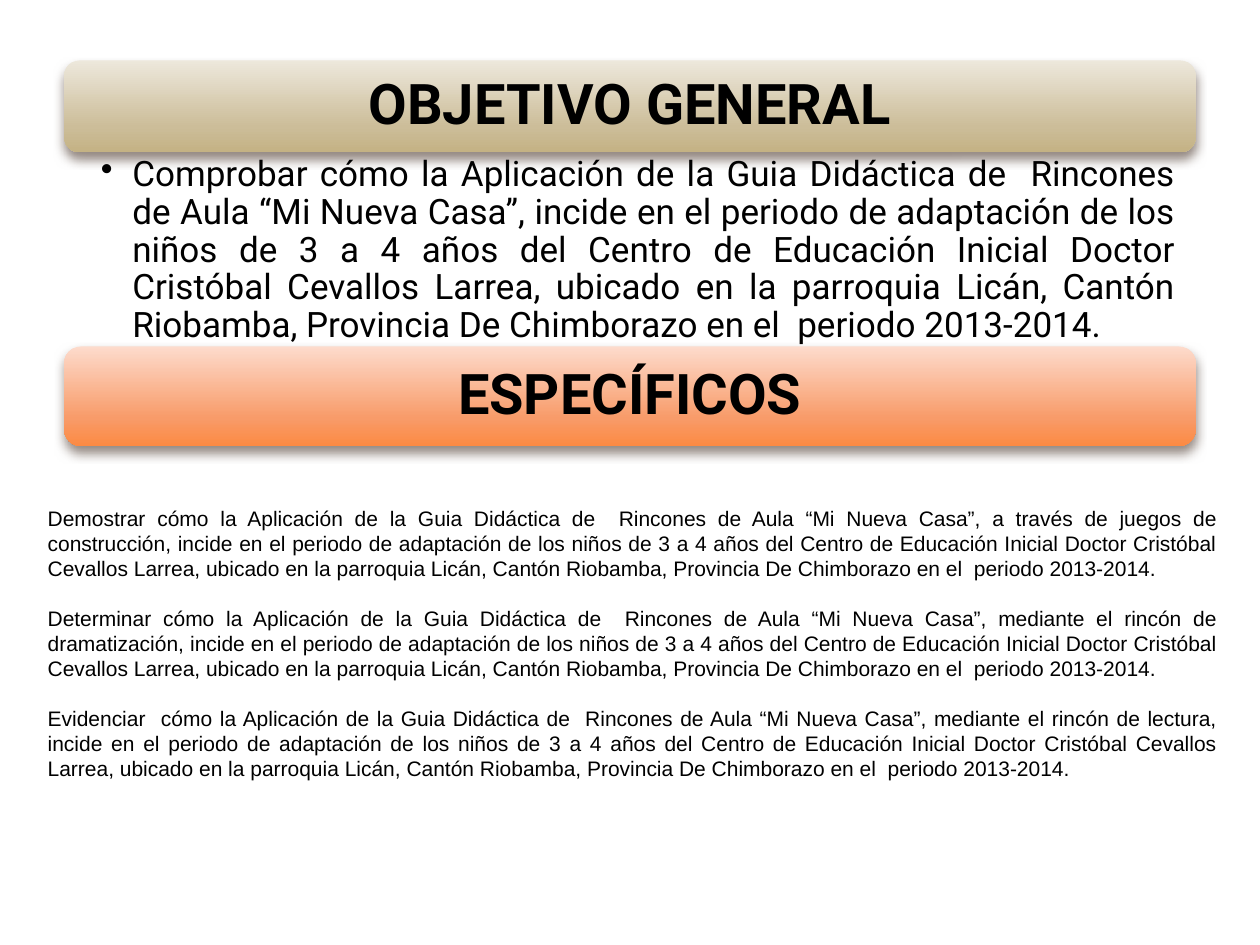
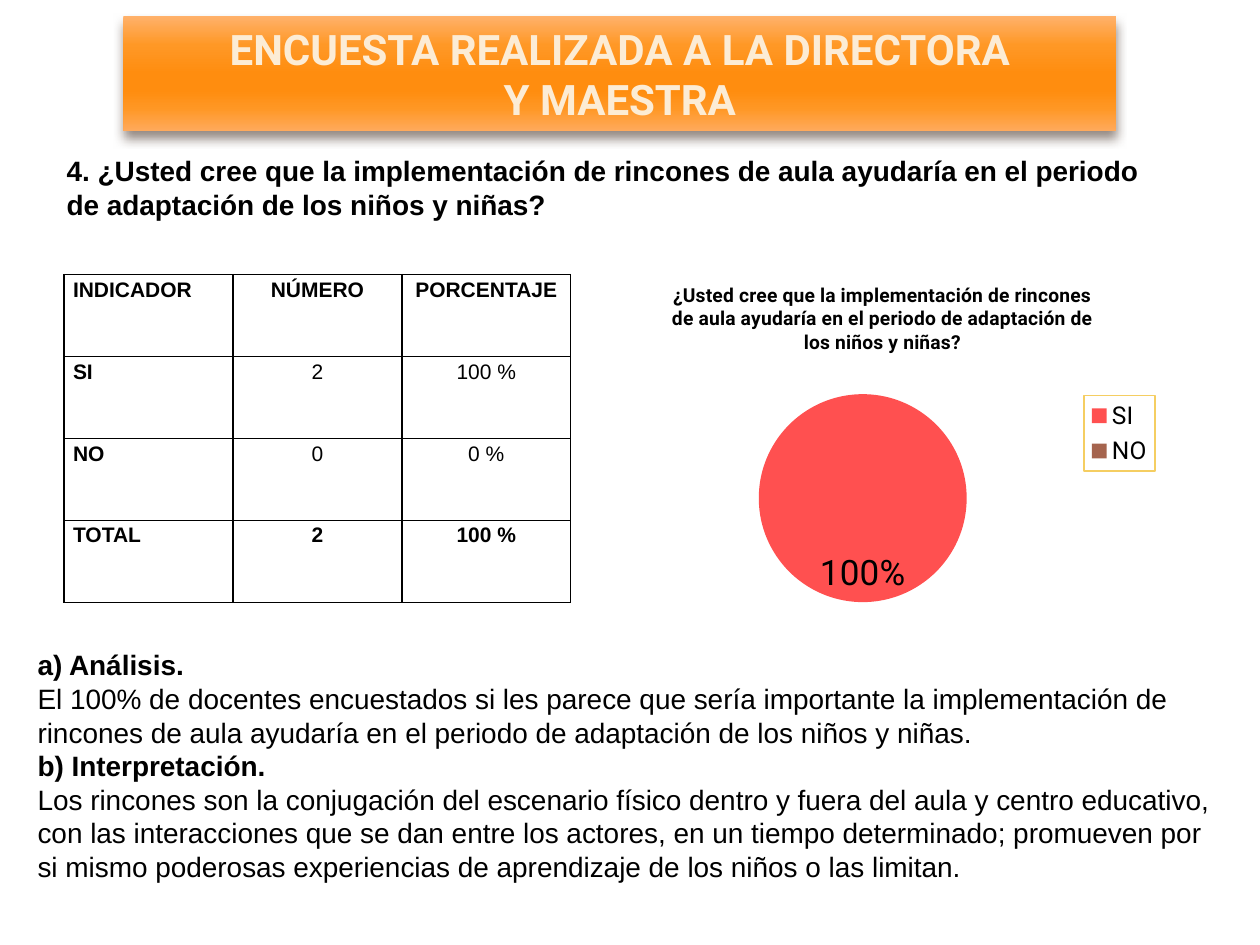
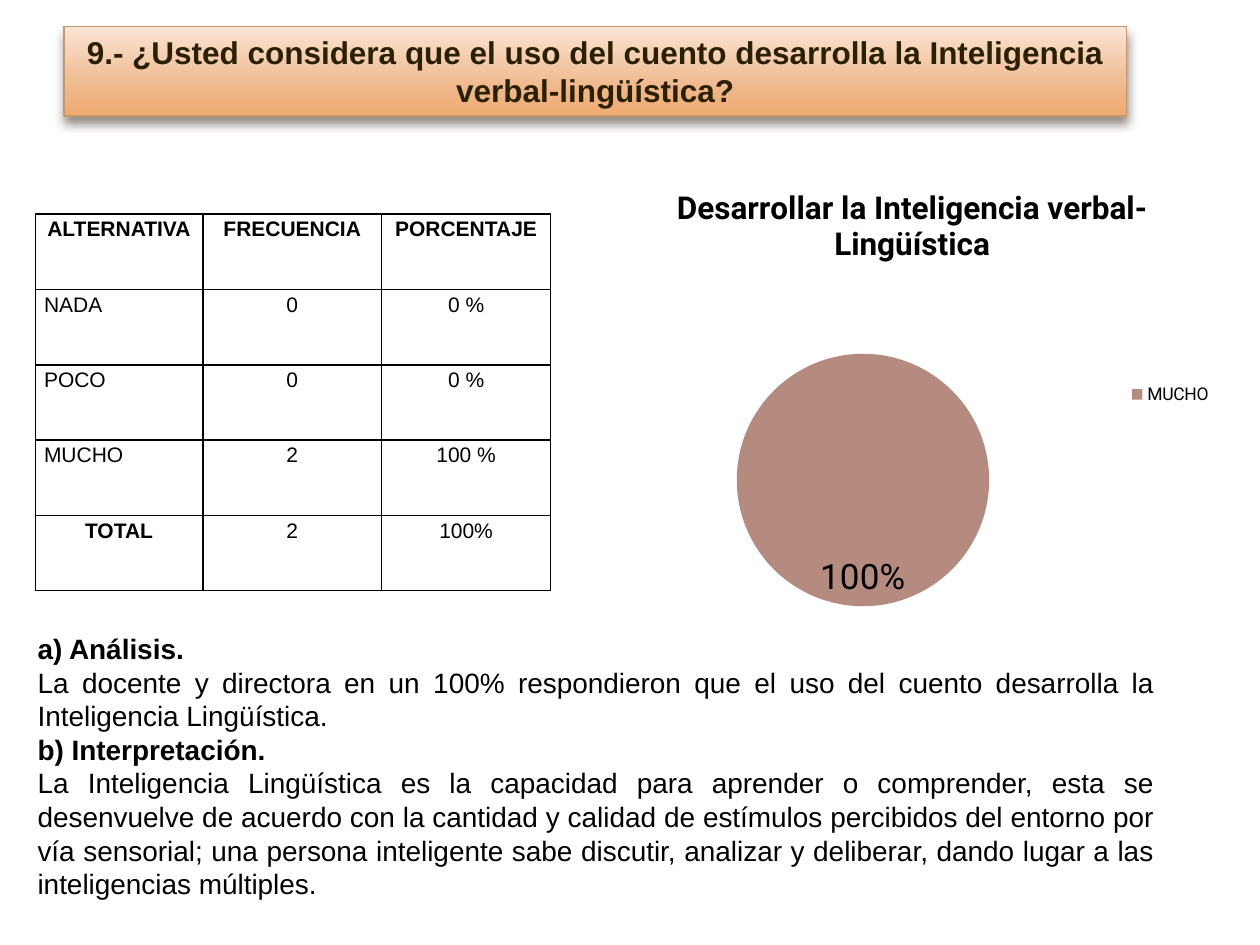
from lxml.etree import SubElement
from pptx import Presentation
from pptx.chart.data import CategoryChartData
from pptx.dml.color import RGBColor
from pptx.enum.chart import XL_CHART_TYPE, XL_LABEL_POSITION as LabelPos, XL_LEGEND_POSITION as LegendPos
from pptx.enum.shapes import MSO_SHAPE as Shape
from pptx.enum.text import MSO_ANCHOR as Anchor, PP_ALIGN as Align
from pptx.oxml import parse_xml
from pptx.oxml.ns import nsdecls, qn
from pptx.util import Inches, Pt

SLIDE_W, SLIDE_H = Inches(10), Inches(7.5)
GRID_COLS, GRID_ROWS = 100, 75
BLACK = "000000"
SHADOW = "4E3B30"
HEADING, BODY = "Roboto", "Arial"

SAND = [(0, "EDE8DC"), (72, "CCBD99"), (100, "C4B284")]
CORAL = [(0, "FDDBCC"), (72, "F89B69"), (100, "FC8A43")]
ORANGE = [(0, "FFB16A"), (25, "FF9826"), (50, "FF8D0F"), (65, "FF8D0F"), (80, "FF9724"), (100, "FFAA5C")]
PEACH = [(0, "FAE4D5"), (72, "EFB688"), (100, "EFAA6F")]

GUIDE = "cómo la Aplicación de la Guia Didáctica de  Rincones de Aula “Mi Nueva Casa”,"
CENTRE = (
    "incide en el periodo de adaptación de los niños de 3 a 4 años del Centro de Educación Inicial "
    "Doctor Cristóbal Cevallos Larrea, ubicado en la parroquia Licán, Cantón Riobamba, "
    "Provincia De Chimborazo en el  periodo 2013-2014."
)
SURVEY_QUESTION = (
    "¿Usted cree que la implementación de rincones de aula ayudaría en el periodo "
    "de adaptación de los niños y niñas?"
)


def rgb(value):
    """Turn a hex string into a colour."""
    return RGBColor.from_string(value)


def grid(col, row, cols, rows):
    """Turn grid columns and rows into left, top, width and height."""
    unit_w, unit_h = SLIDE_W / GRID_COLS, SLIDE_H / GRID_ROWS
    return [round(n) for n in (col * unit_w, row * unit_h, cols * unit_w, rows * unit_h)]


def set_font(font, size, name=BODY, color=BLACK, bold=False):
    """Give a font its size, face, colour and weight."""
    font.size, font.name, font.bold = Pt(size), name, bold
    font.color.rgb = rgb(color)


def write(frame, lines, size, align=Align.LEFT, name=BODY, color=BLACK, bold=(False,), gap=0, spacing=None):
    """Fill a frame with paragraphs, cycling through the given weights."""
    frame.word_wrap = True
    for number, line in enumerate(lines):
        paragraph = frame.paragraphs[0] if number == 0 else frame.add_paragraph()
        paragraph.text, paragraph.alignment = line, align
        if number and gap:
            paragraph.space_before = Pt(gap)
        if spacing:
            paragraph.line_spacing = spacing
        set_font(paragraph.font, size, name, color, bold[number % len(bold)])


def text_block(slide, box, lines, size, anchor=Anchor.MIDDLE, **style):
    """Add a text box and return its frame."""
    frame = slide.shapes.add_textbox(*grid(*box)).text_frame
    frame.vertical_anchor = anchor
    write(frame, lines, size, **style)
    return frame


def banner(slide, box, lines, size, stops, outline=Shape.RECTANGLE, border=None, **style):
    """Add a gradient title band with a soft shadow below it."""
    band = slide.shapes.add_shape(outline, *grid(*box))
    band.fill.gradient()
    band.fill.gradient_angle = 270
    properties = band.element.spPr
    stop_list = properties.find(f"{qn('a:gradFill')}/{qn('a:gsLst')}")
    stop_list.clear()
    for share, color in stops:
        stop = SubElement(stop_list, qn("a:gs"), pos=str(share * 1000))
        SubElement(stop, qn("a:srgbClr"), val=color)
    if border:
        band.line.color.rgb, band.line.width = rgb(border), Pt(0.79)
    else:
        band.line.fill.background()
    band.shadow.inherit = False
    cast = SubElement(
        properties.find(qn("a:effectLst")), qn("a:outerShdw"),
        blurRad=str(Pt(6)), dist=str(Pt(4)), dir="5400000", rotWithShape="0",
    )
    SubElement(SubElement(cast, qn("a:srgbClr"), val=SHADOW), qn("a:alpha"), val="60000")
    band.text_frame.vertical_anchor = Anchor.MIDDLE
    write(band.text_frame, lines, size, align=Align.CENTER, bold=(True,), **style)


def bullet_block(slide, box, line):
    """Add one justified paragraph with a hanging bullet."""
    frame = text_block(slide, box, [], 20, Anchor.TOP)
    frame.margin_left, frame.margin_right = Inches(0.29), Inches(0.16)
    frame.margin_top = frame.margin_bottom = Inches(0.03)
    properties = frame.paragraphs[0]._p.get_or_add_pPr()
    properties.set("marL", str(Inches(0.25)))
    properties.set("indent", str(Inches(-0.25)))
    SubElement(properties, qn("a:buChar"), char="•")
    write(frame, [line], 20, Align.JUSTIFY, HEADING, spacing=0.9)


def border_cell(cell):
    """Draw thin black lines on all four sides of a cell."""
    properties = cell._tc.get_or_add_tcPr()
    for index, side in enumerate(("lnL", "lnR", "lnT", "lnB")):
        properties.insert(index, parse_xml(
            f'<a:{side} {nsdecls("a")} w="{Pt(1)}"><a:solidFill><a:srgbClr val="{BLACK}"/></a:solidFill></a:{side}>'
        ))


def results_table(slide, box, records, shares, first_column, bold_cells):
    """Add a ruled table; first_column lists the alignment of each row's label."""
    left, top, width, height = grid(*box)
    table = slide.shapes.add_table(len(records), len(shares), left, top, width, height).table
    for column, share in zip(table.columns, shares):
        column.width = round(width * share / sum(shares))
    for r, record in enumerate(records):
        table.rows[r].height = round(height / len(records))
        for c, value in enumerate(record):
            cell = table.cell(r, c)
            cell.fill.background()
            cell.margin_left = cell.margin_right = Inches(0.07)
            cell.margin_top = cell.margin_bottom = 0
            align = Align.CENTER if c else first_column[r]
            write(cell.text_frame, [value], 12, align, bold=((r, c) in bold_cells,), spacing=1.15)
            border_cell(cell)


def results_pie(slide, box, title, title_size, answers, legend_size, hidden=(), plot=None, legend_border=None):
    """Add a pie of answers given as (label, share, colour)."""
    data = CategoryChartData(number_format="0%")
    data.categories = [label for label, _, _ in answers]
    data.add_series("Series 1", [share for _, share, _ in answers])
    chart = slide.shapes.add_chart(XL_CHART_TYPE.PIE, *grid(*box), data).chart
    set_font(chart.font, 10, HEADING)

    chart.has_title = True
    chart.chart_title.include_in_layout = False
    write(chart.chart_title.text_frame, [title], title_size, Align.CENTER, HEADING, bold=(True,))

    pie = chart.plots[0]
    pie.vary_by_categories = True
    for index, (_, _, color) in enumerate(answers):
        fill = pie.series[0].points[index].format.fill
        fill.solid()
        fill.fore_color.rgb = rgb(color)
    first_point = pie.series[0]._element.find(qn("c:dPt"))
    first_point.addprevious(parse_xml(f'<c:explosion {nsdecls("c")} val="25"/>'))

    pie.has_data_labels = True
    labels = pie.data_labels
    labels.show_value, labels.show_percentage = True, False
    labels.number_format, labels.number_format_is_linked = "0%;;;", False
    labels.position = LabelPos.INSIDE_END
    set_font(labels.font, 20, HEADING)

    chart.has_legend = True
    chart.legend.position = LegendPos.RIGHT
    chart.legend.include_in_layout = False
    set_font(chart.legend.font, legend_size, HEADING)
    legend = chart.legend._element
    for index in reversed(hidden):
        legend.find(qn("c:legendPos")).addnext(parse_xml(
            f'<c:legendEntry {nsdecls("c")}><c:idx val="{index}"/><c:delete val="1"/></c:legendEntry>'
        ))
    if legend_border:
        legend.find(qn("c:overlay")).addnext(parse_xml(
            f'<c:spPr {nsdecls("c", "a")}><a:ln w="{Pt(0.75)}"><a:solidFill>'
            f'<a:srgbClr val="{legend_border}"/></a:solidFill></a:ln></c:spPr>'
        ))
    if plot:
        place_plot(chart, plot)


def place_plot(chart, shares):
    """Fix the inner plot area at shares of the chart's size."""
    area = chart._chartSpace.chart.plotArea
    for automatic in area.findall(qn("c:layout")):
        area.remove(automatic)
    layout = parse_xml(f'<c:layout {nsdecls("c")}><c:manualLayout/></c:layout>')
    settings = [("layoutTarget", "inner"), ("xMode", "edge"), ("yMode", "edge"), *zip("xywh", shares)]
    for tag, value in settings:
        SubElement(layout[0], qn(f"c:{tag}"), val=str(value))
    area.insert(0, layout)


def objectives_slide(slide):
    """Build the general and specific objectives."""
    heading = {"outline": Shape.ROUNDED_RECTANGLE, "name": HEADING, "spacing": 0.9}
    banner(slide, (5.1, 4.8, 89.8, 7.3), ["OBJETIVO GENERAL"], 32, SAND, **heading)
    bullet_block(slide, (5.1, 12.1, 89.8, 14.9), f"Comprobar {GUIDE} {CENTRE}")
    banner(slide, (5.1, 27.5, 89.8, 7.9), ["ESPECÍFICOS"], 32, CORAL, **heading)
    goals = [
        f"Demostrar {GUIDE} a través de juegos de construcción, {CENTRE}",
        f"Determinar {GUIDE} mediante el rincón de dramatización, {CENTRE}",
        f"Evidenciar  {GUIDE} mediante el rincón de lectura, {CENTRE}",
    ]
    text_block(slide, (2.8, 39.6, 94.9, 27.3), goals, 12, Anchor.TOP, align=Align.JUSTIFY, gap=14)


def findings(slide, box, analysis, interpretation, align=Align.LEFT):
    """Add the analysis and interpretation under their bold headings."""
    lines = ["a) Análisis.", analysis, "b) Interpretación.", interpretation]
    text_block(slide, box, lines, 16, align=align, bold=(True, False))


def corners_slide(slide):
    """Build the survey question on classroom corners."""
    title = ["ENCUESTA REALIZADA A LA DIRECTORA", "Y MAESTRA"]
    banner(slide, (9.8, 1.3, 78.8, 9.1), title, 24, ORANGE, name=HEADING, color="FCECD5")
    text_block(slide, (4.3, 11.7, 87.8, 6.5), [f"4. {SURVEY_QUESTION}"], 16, Anchor.TOP, bold=(True,))
    records = [
        ("INDICADOR", "NÚMERO", "PORCENTAJE"),
        ("SI", "2", "100 %"),
        ("NO", "0", "0 %"),
        ("TOTAL", "2", "100 %"),
    ]
    bold_cells = {(r, c) for r in range(4) for c in range(3) if r in (0, 3) or c == 0}
    results_table(slide, (5.1, 21.8, 40.2, 26), records, (1, 1, 1), [Align.LEFT] * 4, bold_cells)
    results_pie(
        slide, (47.6, 21, 44.9, 26.8), SURVEY_QUESTION, 11,
        [("SI", 1, "FF5050"), ("NO", 0, "A5644E")], 14,
        plot=(0.02, 0.23, 0.89, 0.77), legend_border="F5CE62",
    )
    findings(
        slide, (2, 50.8, 95.3, 19.9),
        "El 100% de docentes encuestados si les parece que sería importante la implementación de "
        "rincones de aula ayudaría en el periodo de adaptación de los niños y niñas.",
        "Los rincones son la conjugación del escenario físico dentro y fuera del aula y centro educativo, "
        "con las interacciones que se dan entre los actores, en un tiempo determinado; promueven por si "
        "mismo poderosas experiencias de aprendizaje de los niños o las limitan.",
    )


def story_slide(slide):
    """Build the survey question on stories and verbal intelligence."""
    question = "9.- ¿Usted considera que el uso del cuento desarrolla la Inteligencia verbal-lingüística?"
    banner(slide, (5.1, 2.1, 84.3, 7.1), [question], 18, PEACH, border="C3986D", color="2A2003")
    records = [
        ("ALTERNATIVA", "FRECUENCIA", "PORCENTAJE"),
        ("NADA", "0", "0 %"),
        ("POCO", "0", "0 %"),
        ("MUCHO", "2", "100 %"),
        ("TOTAL", "2", "100%"),
    ]
    label_aligns = [Align.CENTER, *[Align.JUSTIFY] * 3, Align.CENTER]
    bold_cells = {(0, 0), (0, 1), (0, 2), (4, 0)}
    results_table(slide, (2.8, 17, 40.9, 29.9), records, (1.33, 1.42, 1.34), label_aligns, bold_cells)
    results_pie(
        slide, (47.6, 13.1, 49.6, 36.4), "Desarrollar la Inteligencia verbal-Lingüística", 18,
        [("NADA", 0, "F0A22E"), ("POCO", 0, "A5644E"), ("MUCHO", 1, "B58B80")], 10, hidden=(0, 1),
    )
    findings(
        slide, (2, 49.5, 90.6, 22.6),
        "La docente y directora en un 100% respondieron que el uso del cuento desarrolla la "
        "Inteligencia Lingüística.",
        "La Inteligencia Lingüística es la capacidad para aprender o comprender, esta se desenvuelve de "
        "acuerdo con la cantidad y calidad de estímulos percibidos del entorno por vía sensorial; una "
        "persona inteligente sabe discutir, analizar y deliberar, dando lugar a las inteligencias múltiples.",
        Align.JUSTIFY,
    )


def main():
    """Build and save the presentation."""
    deck = Presentation()
    deck.slide_width, deck.slide_height = SLIDE_W, SLIDE_H
    for build in (objectives_slide, corners_slide, story_slide):
        build(deck.slides.add_slide(deck.slide_layouts[6]))
    deck.save("out.pptx")


if __name__ == "__main__":
    main()
